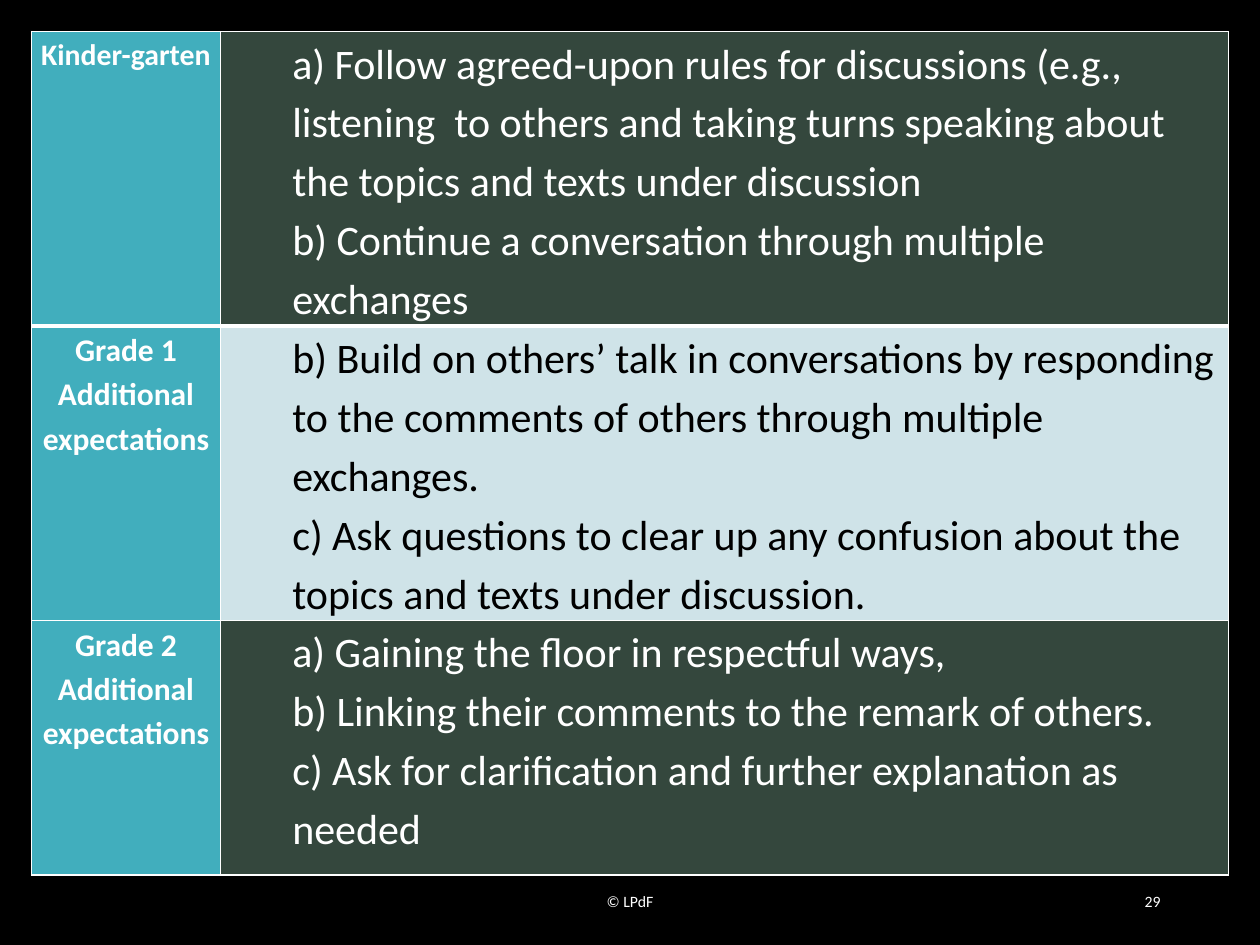
"""Build a slide with a table of discussion expectations by grade."""
from dataclasses import dataclass

from lxml.etree import SubElement
from pptx import Presentation
from pptx.dml.color import RGBColor
from pptx.enum.text import MSO_ANCHOR, PP_ALIGN
from pptx.oxml.ns import qn
from pptx.util import Inches, Pt

BLACK = RGBColor(0x00, 0x00, 0x00)
WHITE = RGBColor(0xFF, 0xFF, 0xFF)
TEAL = RGBColor(0x41, 0xAE, 0xBD)
DARK_GREEN = RGBColor(0x34, 0x47, 0x3D)
PALE_BLUE = RGBColor(0xCF, 0xE3, 0xE8)
COLUMN_WIDTHS = (1.5, 8)
HEADER_RULE = 3
THIN_RULE = 1


@dataclass
class Grade:
    label: list[str]
    label_size: int
    expectations: list[str]
    fill: RGBColor
    color: RGBColor
    height: float


@dataclass
class FooterText:
    text: str
    left: float
    width: float
    alignment: PP_ALIGN


GRADES = [
    Grade(["Kinder-garten"], 17, [
        "a) Follow agreed-upon rules for discussions (e.g., listening  to others "
        "and taking turns speaking about the topics and texts under discussion",
        "b) Continue a conversation through multiple exchanges",
    ], DARK_GREEN, WHITE, 2.02),
    Grade(["Grade 1", "Additional expectations"], 18, [
        "b) Build on others’ talk in conversations by responding to the comments "
        "of others through multiple exchanges.",
        "c) Ask questions to clear up any confusion about the topics and texts "
        "under discussion.",
    ], PALE_BLUE, BLACK, 1.68),
    Grade(["Grade 2", "Additional expectations"], 18, [
        "a) Gaining the floor in respectful ways,",
        "b) Linking their comments to the remark of others.",
        "c) Ask for clarification and further explanation as needed",
    ], DARK_GREEN, WHITE, 2.02),
]
FOOTERS = [
    FooterText("© LPdF", 3.31, 3.38, PP_ALIGN.CENTER),
    FooterText("29", 7.06, 2.25, PP_ALIGN.RIGHT),
]


def set_attributes(target, values: dict) -> None:
    for name, value in values.items():
        setattr(target, name, value)


def write_paragraphs(text_frame, lines: list[str], size: int, color: RGBColor,
                     bold: bool, layout: dict, indent: float = 0) -> None:
    for index, line in enumerate(lines):
        paragraph = text_frame.paragraphs[0] if index == 0 else text_frame.add_paragraph()
        set_attributes(paragraph, layout)
        if indent:
            properties = paragraph._p.get_or_add_pPr()
            properties.set("marL", str(Inches(indent)))
            properties.set("indent", "0")
        run = paragraph.add_run()
        run.text = line
        set_attributes(run.font, {"name": "Calibri", "size": Pt(size), "bold": bold})
        run.font.color.rgb = color


def format_cell(cell, fill: RGBColor, top: int, bottom: int) -> None:
    set_attributes(cell, {
        "margin_left": Inches(0.07), "margin_right": Inches(0.07),
        "margin_top": 0, "margin_bottom": 0, "vertical_anchor": MSO_ANCHOR.TOP,
    })
    properties = cell._tc.get_or_add_tcPr()
    widths = {"a:lnL": THIN_RULE, "a:lnR": THIN_RULE, "a:lnT": top, "a:lnB": bottom}
    for tag, width in widths.items():
        line = SubElement(properties, qn(tag), w=str(Pt(width)))
        solid = SubElement(line, qn("a:solidFill"))
        SubElement(solid, qn("a:srgbClr"), val=str(WHITE))
    cell.fill.solid()
    cell.fill.fore_color.rgb = fill


def add_grade_table(slide, grades: list[Grade]) -> None:
    height = sum(grade.height for grade in grades)
    table = slide.shapes.add_table(
        len(grades), len(COLUMN_WIDTHS), Inches(0.25), Inches(0.25),
        Inches(sum(COLUMN_WIDTHS)), Inches(height)).table
    for column, width in zip(table.columns, COLUMN_WIDTHS):
        column.width = Inches(width)
    for index, grade in enumerate(grades):
        table.rows[index].height = Inches(grade.height)
        top = HEADER_RULE if index == 1 else THIN_RULE
        bottom = HEADER_RULE if index == 0 else THIN_RULE
        label, details = table.cell(index, 0), table.cell(index, 1)
        format_cell(label, TEAL, top, bottom)
        format_cell(details, grade.fill, top, bottom)
        write_paragraphs(label.text_frame, grade.label, grade.label_size, WHITE, True,
                         {"alignment": PP_ALIGN.CENTER, "line_spacing": 1.15})
        write_paragraphs(details.text_frame, grade.expectations, 24, grade.color, False,
                         {"alignment": PP_ALIGN.LEFT, "line_spacing": 1.15}, indent=0.5)


def add_footer(slide, footer: FooterText) -> None:
    shape = slide.shapes.add_textbox(
        Inches(footer.left), Inches(6.95), Inches(footer.width), Inches(0.4))
    set_attributes(shape.text_frame,
                   {"word_wrap": True, "vertical_anchor": MSO_ANCHOR.MIDDLE})
    write_paragraphs(shape.text_frame, [footer.text], 9, WHITE, False,
                     {"alignment": footer.alignment})


def main() -> None:
    presentation = Presentation()
    set_attributes(presentation, {"slide_width": Inches(10), "slide_height": Inches(7.5)})
    slide = presentation.slides.add_slide(presentation.slide_layouts[6])
    slide.background.fill.solid()
    slide.background.fill.fore_color.rgb = BLACK
    add_grade_table(slide, GRADES)
    for footer in FOOTERS:
        add_footer(slide, footer)
    presentation.save("out.pptx")


if __name__ == "__main__":
    main()
